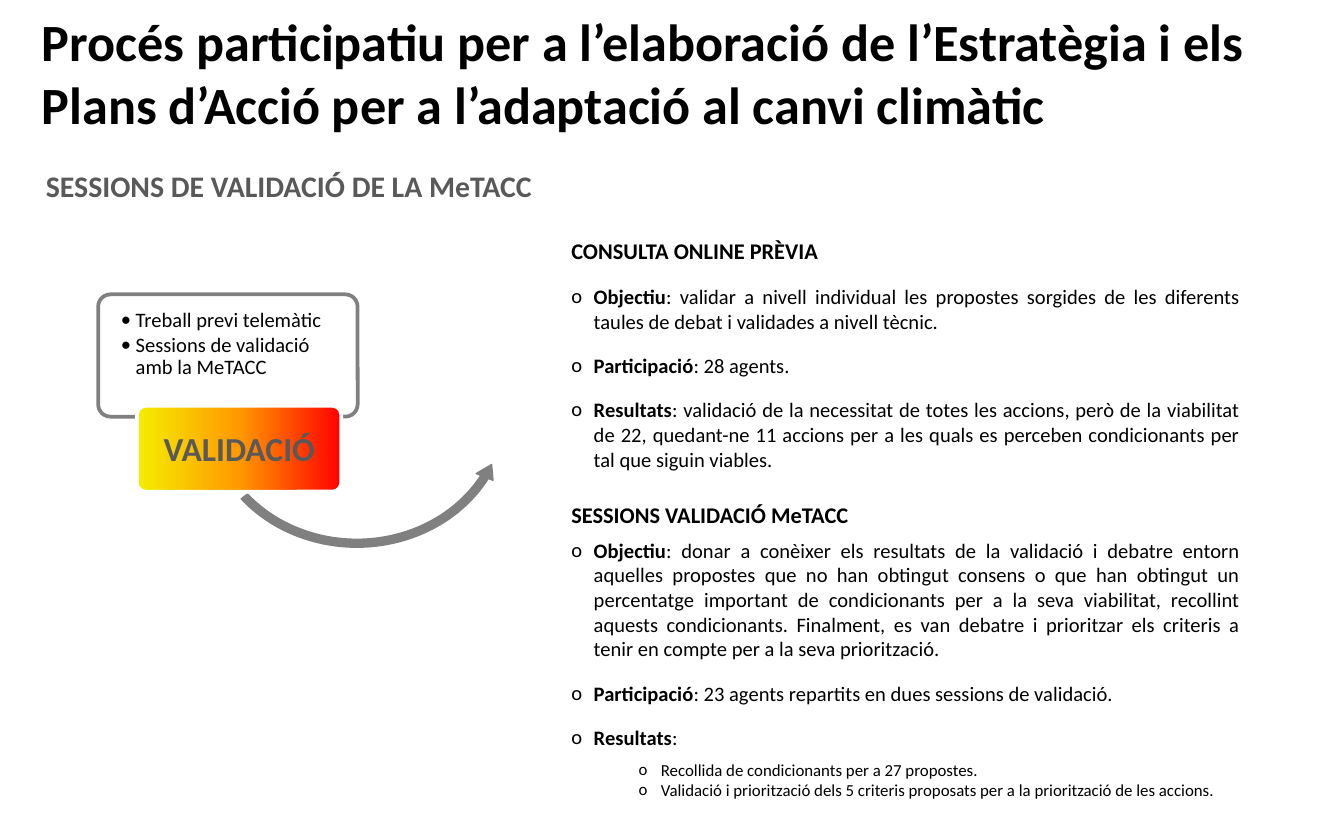
import copy

import pptx
import pptx.dml.color
import pptx.enum.shapes
import pptx.enum.text
import pptx.oxml
import pptx.oxml.ns
import pptx.util

Pt = pptx.util.Pt
Shape = pptx.enum.shapes.MSO_SHAPE
Align = pptx.enum.text.PP_ALIGN
Anchor = pptx.enum.text.MSO_ANCHOR
qn = pptx.oxml.ns.qn

HUES = {"ink": "000000", "slate": "595959", "gray": "808080", "white": "FFFFFF",
        "yellow": "F4EE00", "orange": "FF9900", "red": "FF0000"}
SIDES = ("left", "top", "right", "bottom")


def tint(name):
    return pptx.dml.color.RGBColor.from_string(HUES[name])


def apply(item, values):
    for name, value in values.items():
        setattr(item, name, value)


def node(tag, **values):
    item = pptx.oxml.parse_xml(f'<a:{tag} xmlns:a="{pptx.oxml.ns.nsuri("a")}"/>')
    for name, value in values.items():
        item.set(name, value)
    return item


class Deck:
    """Holds the font and the current slide."""
    font = "Calibri"

    def __init__(self, width, height):
        self.file = pptx.Presentation()
        apply(self.file, {"slide_width": Pt(width), "slide_height": Pt(height)})
        self.slide = self.file.slides.add_slide(self.file.slide_layouts[6])

    def shape(self, kind, place, line, weight, adjust, fill=None, alpha=None):
        item = self.slide.shapes.add_shape(kind, *map(Pt, place))
        item.shadow.inherit = False
        for slot, value in enumerate(adjust):
            item.adjustments[slot] = value
        item.line.color.rgb = tint(line)
        item.line.width = Pt(weight)
        if fill:
            item.fill.solid()
            item.fill.fore_color.rgb = tint(fill)
        if alpha:
            color = item.fill._xPr.find(qn("a:solidFill"))[0]
            color.append(node("alpha", val=str(alpha * 1000)))
        return item

    def blend(self, item, names):
        """Fill a shape left to right with evenly spaced colours."""
        item.fill.gradient()
        item.fill.gradient_angle = 0
        stops = item.fill._xPr.find(".//" + qn("a:gsLst"))
        while len(stops) < len(names):
            stops.append(copy.deepcopy(stops[-1]))
        for slot, stop in enumerate(item.fill.gradient_stops):
            stop.color.rgb = tint(names[slot])
            stop.position = slot / (len(names) - 1)

    def box(self, place, inset=(6.6, 3.3, 6.6, 3.3), anchor=Anchor.TOP):
        frame = self.slide.shapes.add_textbox(*map(Pt, place)).text_frame
        apply(frame, {"word_wrap": True, "vertical_anchor": anchor})
        apply(frame, {f"margin_{side}": Pt(gap) for side, gap in zip(SIDES, inset)})
        return frame

    def para(self, frame, runs, size, hue="ink", mark=None, indent=0, hang=0, **form):
        """Add a paragraph; runs are (text, bold) pairs, form its format values."""
        first = not frame.paragraphs[0].runs
        item = frame.paragraphs[0] if first else frame.add_paragraph()
        if mark:
            props = item._p.get_or_add_pPr()
            props.set("marL", str(Pt(indent)))
            props.set("indent", str(-Pt(hang)))
            props.append(node("buFont", typeface=self.font))
            props.append(node("buChar", char=mark))
        if first:
            form.pop("space_before", None)
        apply(item, form)
        for text, bold in runs:
            run = item.add_run()
            run.text = text
            apply(run.font, {"name": self.font, "size": Pt(size), "bold": bold})
            run.font.color.rgb = tint(hue)


def main():
    deck = Deck(720, 450)

    head = deck.box((18, 86.4, 507.6, 26), anchor=Anchor.MIDDLE)
    deck.para(head, [("SESSIONS DE VALIDACIÓ DE LA MeTACC", True)], 16, "slate")

    deck.shape(Shape.ROUNDED_RECTANGLE, (52.6, 157.7, 139, 65.5), "gray", 2, [0.1],
               "white", 90)
    tasks = deck.box((54.7, 159.8, 135.4, 48.2), (10, 6, 10, 10))
    for text in ("Treball previ telemàtic", "Sessions de validació amb la MeTACC"):
        deck.para(tasks, [(text, False)], 11, mark="•", indent=8, hang=8, level=1,
                  line_spacing=0.9, space_after=Pt(1.65))

    deck.shape(Shape.LEFT_CIRCULAR_ARROW, (107.3, 144, 167.8, 151.9), "gray", 0.75,
               [0.028, 3.386, 16.478, 85.582, 0.032], "gray")
    stage = deck.shape(Shape.ROUNDED_RECTANGLE, (73.4, 217.4, 109.4, 46), "white", 2, [0.1])
    deck.blend(stage, ("yellow", "orange", "red"))
    label = deck.box((74.9, 218.2, 106.6, 43.2), (3, 2, 3, 2), Anchor.MIDDLE)
    deck.para(label, [("VALIDACIÓ", True)], 18, "slate", alignment=Align.CENTER)

    body = deck.box((299.5, 123.8, 371.5, 307.4))
    even = {"alignment": Align.JUSTIFY}
    airy = {**even, "space_before": Pt(5.3), "space_after": Pt(5.3)}
    parts = [
        ("CONSULTA ONLINE PRÈVIA", airy, [
            "Objectiu: validar a nivell individual les propostes sorgides de les diferents "
            "taules de debat i validades a nivell tècnic.",
            "Participació: 28 agents.",
            "Resultats: validació de la necessitat de totes les accions, però de la "
            "viabilitat de 22, quedant-ne 11 accions per a les quals es perceben "
            "condicionants per tal que siguin viables."]),
        ("SESSIONS VALIDACIÓ MeTACC", {**even, "space_before": Pt(10.6)}, [
            "Objectiu: donar a conèixer els resultats de la validació i debatre entorn "
            "aquelles propostes que no han obtingut consens o que han obtingut un "
            "percentatge important de condicionants per a la seva viabilitat, recollint "
            "aquests condicionants. Finalment, es van debatre i prioritzar els criteris a "
            "tenir en compte per a la seva priorització.",
            "Participació: 23 agents repartits en dues sessions de validació.",
            "Resultats:"]),
    ]
    for name, form, points in parts:
        deck.para(body, [(name, True)], 12, **form)
        for point in points:
            lead, colon, rest = point.partition(":")
            deck.para(body, [(lead, True), (colon + rest, False)], 11, mark="o",
                      indent=12, hang=12, **airy)
    for text in ("Recollida de condicionants per a 27 propostes.",
                 "Validació i priorització dels 5 criteris proposats per a la "
                 "priorització de les accions."):
        deck.para(body, [(text, False)], 9, mark="o", indent=48, hang=12, level=1, **even)

    title = deck.box((15.8, 1.4, 704.2, 74.2), anchor=Anchor.MIDDLE)
    deck.para(title, [("Procés participatiu per a l’elaboració de l’Estratègia i els "
                       "Plans d’Acció per a l’adaptació al canvi climàtic", True)], 28)

    deck.file.save("out.pptx")


if __name__ == "__main__":
    main()
